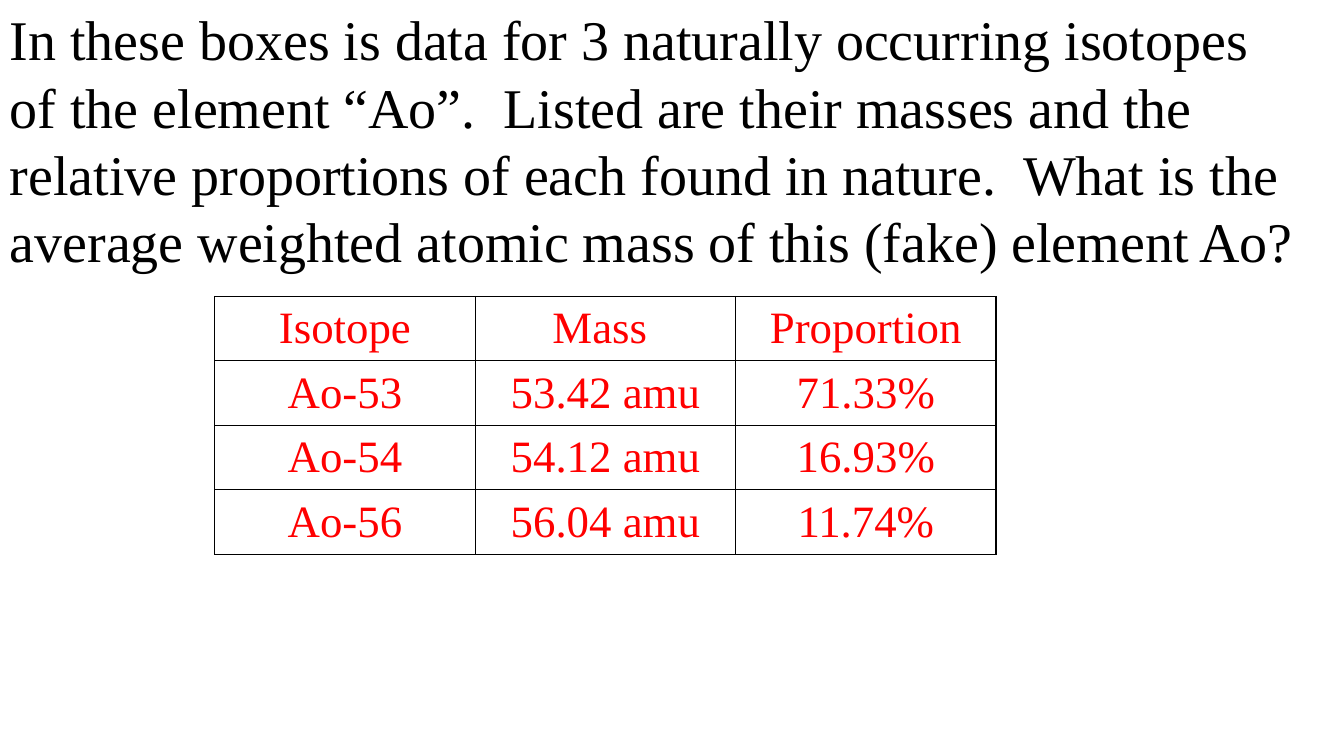
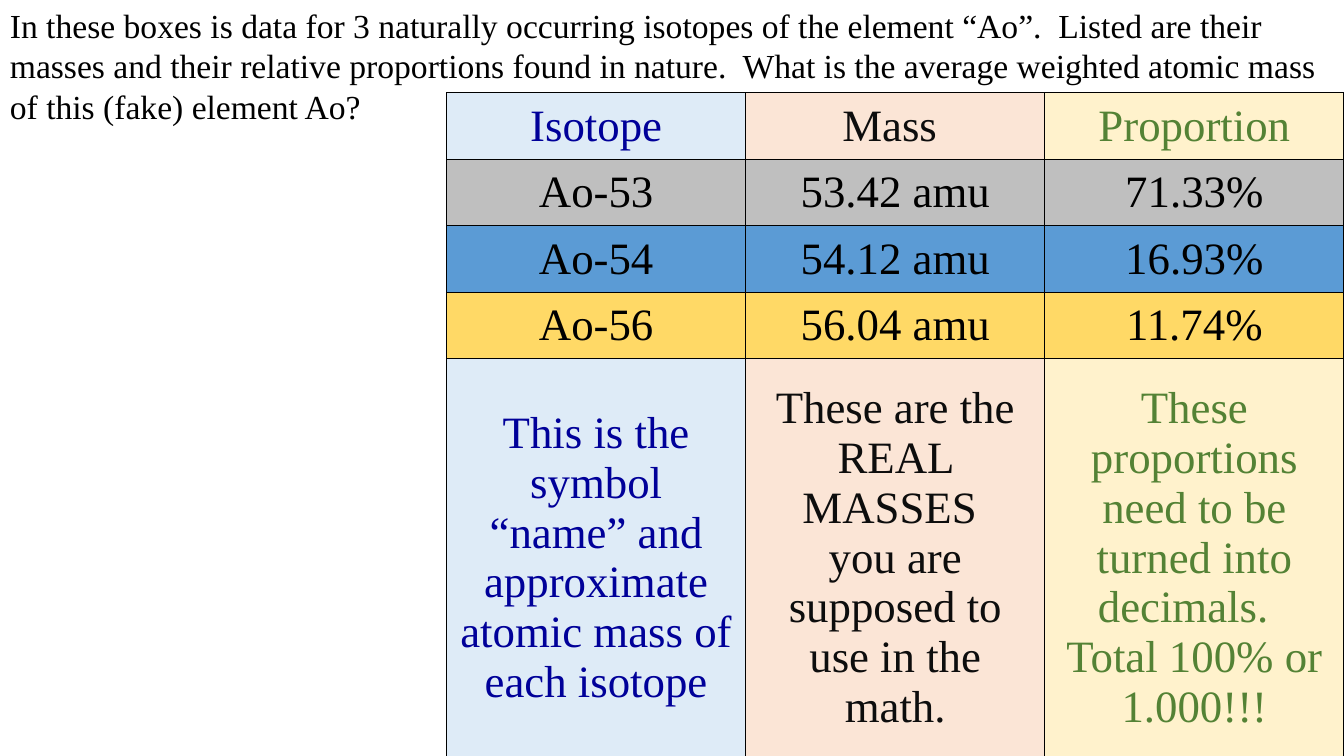
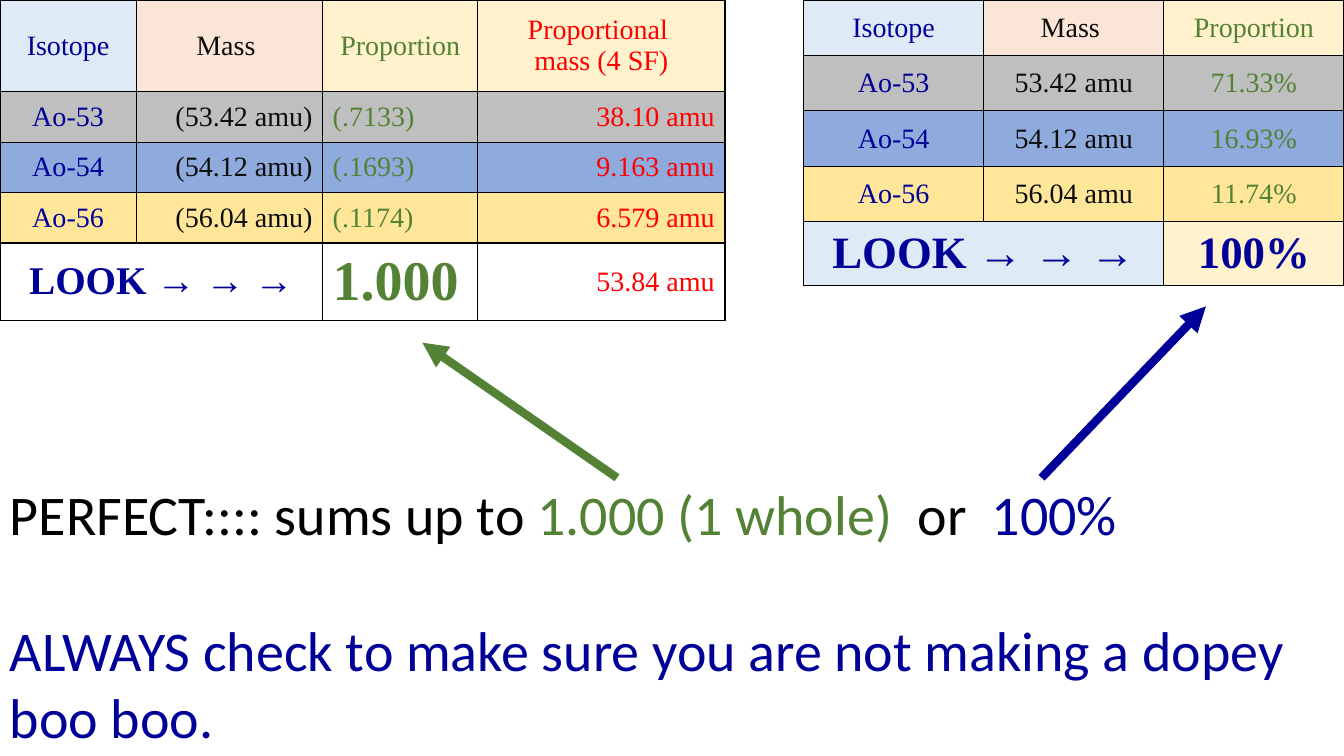
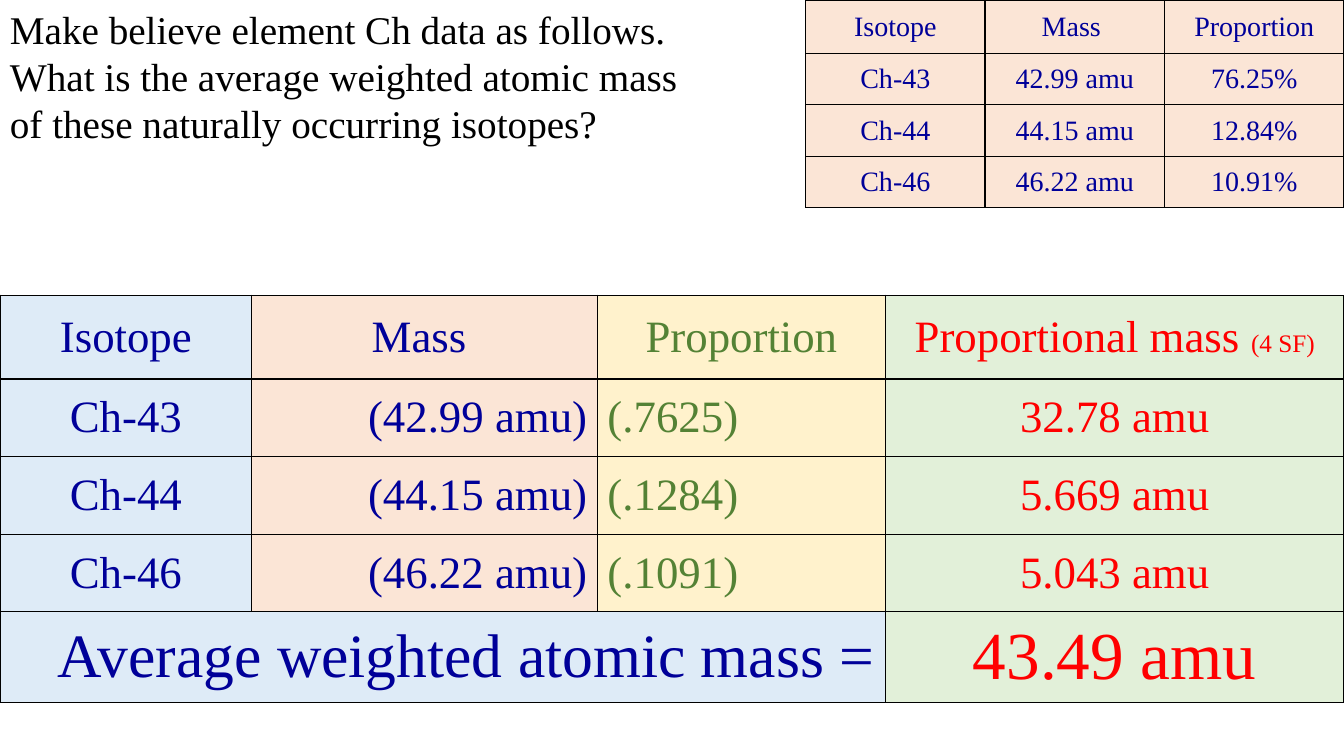
from lxml.etree import SubElement
from pptx import Presentation
from pptx.dml.color import RGBColor
from pptx.enum.shapes import MSO_CONNECTOR
from pptx.enum.text import MSO_ANCHOR, PP_ALIGN
from pptx.oxml import parse_xml
from pptx.oxml.ns import nsdecls, qn
from pptx.util import Inches, Pt

WIDTH, HEIGHT = 13.33, 7.5
SERIF, SANS = "Times New Roman", "Calibri"
BLACK, INK, NAVY, GREEN, RED = "000000", "0D0D0D", "000099", "548235", "FF0000"
ICE, PEACH, CREAM, MINT = "DEEBF7", "FBE5D6", "FFF2CC", "E2F0D9"
GREY, BLUE, GOLD = "BFBFBF", "5B9BD5", "FFD966"
PERIWINKLE, SAND = "8FAADC", "FFE699"
ALIGNMENTS = {"l": PP_ALIGN.LEFT, "c": PP_ALIGN.CENTER, "r": PP_ALIGN.RIGHT}
colour_of = RGBColor.from_string

HEADER = ["Isotope", "Mass ", "Proportion"]
AO_ROWS = [
    ["Ao-53", "53.42 amu", "71.33%"],
    ["Ao-54", "54.12 amu", "16.93%"],
    ["Ao-56", "56.04 amu", "11.74%"],
]
CH_ROWS = [
    ["Ch-43", "42.99 amu", "76.25%"],
    ["Ch-44", "44.15 amu", "12.84%"],
    ["Ch-46", "46.22 amu", "10.91%"],
]
COLUMN_FILLS = [ICE, PEACH, CREAM]
COLUMN_COLOURS = [NAVY, INK, GREEN]


def add_text(slide, text, height, size, font_name=SERIF, colour=BLACK):
    """Full-width text at the top of the slide; \\v breaks a line."""
    box = slide.shapes.add_textbox(0, 0, Inches(WIDTH), Inches(height))
    box.text_frame.word_wrap = True
    box.text_frame.text = text
    for paragraph in box.text_frame.paragraphs:
        paragraph.font.name = font_name
        paragraph.font.size = Pt(size)
        paragraph.font.color.rgb = colour_of(colour)
    return box


def add_grid(slide, left, top, width, shares, heights, rows, size,
             colours, fills, aligns, emphasis=None, merged=1):
    """Bordered table. colours, fills and aligns hold one entry per row and
    column; emphasis maps (row, column) to (size, bold); the first `merged`
    cells of the last row become one."""
    table = slide.shapes.add_table(
        len(rows), len(shares), Inches(left), Inches(top),
        Inches(width), Inches(sum(heights))).table
    table.first_row = table.horz_banding = False
    for column, share in zip(table.columns, shares):
        column.width = Inches(width * share / sum(shares))
    for row, height in zip(table.rows, heights):
        row.height = Inches(height)
    for r, texts in enumerate(rows):
        for c, text in enumerate(texts):
            cell = table.cell(r, c)
            cell.text = text
            cell.vertical_anchor = MSO_ANCHOR.MIDDLE
            cell_size, bold = (emphasis or {}).get((r, c), (size, False))
            for paragraph in cell.text_frame.paragraphs:
                paragraph.alignment = ALIGNMENTS[aligns[r][c]]
                paragraph.font.name = SERIF
                paragraph.font.size = Pt(cell_size)
                paragraph.font.bold = bold
                paragraph.font.color.rgb = colour_of(colours[r][c])
            for side in "LRTB":
                cell._tc.get_or_add_tcPr().append(parse_xml(
                    f'<a:ln{side} {nsdecls("a")} w="12700"><a:solidFill>'
                    f'<a:srgbClr val="{BLACK}"/></a:solidFill></a:ln{side}>'))
            if fills[r][c]:
                cell.fill.solid()
                cell.fill.fore_color.rgb = colour_of(fills[r][c])
            else:
                cell.fill.background()
    if merged > 1:
        last = len(rows) - 1
        table.cell(last, 0).merge(table.cell(last, merged - 1))
    return table


presentation = Presentation()
presentation.slide_width, presentation.slide_height = Inches(WIDTH), Inches(HEIGHT)
blank = presentation.slide_layouts[6]
question, labels, check, practice = [
    presentation.slides.add_slide(blank) for _ in range(4)]

# Slide 1: the question and its data
add_text(question,
         "In these boxes is data for 3 naturally occurring isotopes\v"
         "of the element “Ao”.  Listed are their masses and the \v"
         "relative proportions of each found in nature.  What is the \v"
         "average weighted atomic mass of this (fake) element Ao?", 2.79, 40)
add_grid(question, 2.13, 2.94, 7.75, [1] * 3, [0.64] * 4, [HEADER] + AO_ROWS, 32,
         colours=[[RED] * 3] * 4, fills=[[None] * 3] * 4, aligns=["ccc"] * 4)

# Slide 2: what each column means
add_text(labels,
         "In these boxes is data for 3 naturally occurring isotopes of the element "
         "“Ao”.  Listed are their masses and their relative proportions found in "
         "nature.  What is the average weighted atomic mass of this (fake) element Ao?",
         1.31, 24)
meanings = [
    "This is the symbol “name” and approximate atomic mass of each isotope",
    "These are the REAL MASSES \vyou are supposed to use in the math.",
    "These proportions need to be turned into decimals.  \nTotal 100% or 1.000!!!",
]
add_grid(labels, 4.43, 0.92, WIDTH - 4.43, [1] * 3, [0.66] * 4 + [3.95],
         [HEADER] + AO_ROWS + [meanings], 32,
         colours=[COLUMN_COLOURS] + [[BLACK] * 3] * 3 + [COLUMN_COLOURS],
         fills=[COLUMN_FILLS] + [[fill] * 3 for fill in (GREY, BLUE, GOLD)]
         + [COLUMN_FILLS],
         aligns=["ccc"] * 5)

# Slide 3: percentages and decimals both add up to a whole
look = "LOOK → → →"
isotope_fills = [[fill] * 4 for fill in (GREY, PERIWINKLE, SAND)]
add_grid(check, 7.97, 0, WIDTH - 7.97, [1] * 3, [0.55] * 4 + [0.63],
         [HEADER] + AO_ROWS + [[look, "", "100%"]], 20,
         colours=[COLUMN_COLOURS] * 4 + [[NAVY] * 3],
         fills=[COLUMN_FILLS] + isotope_fills + [[ICE, ICE, CREAM]],
         aligns=["ccc"] * 5,
         emphasis={(4, 0): (32, True), (4, 2): (32, True)}, merged=2)
add_grid(check, 0, 0, 7.19, [1.35, 1.85, 1.54, 2.45], [0.91] + [0.5] * 3 + [0.77],
         [HEADER + ["Proportional \vmass (4 SF)"],
          ["Ao-53", "(53.42 amu)", "(.7133)", "38.10 amu"],
          ["Ao-54", "(54.12 amu)", "(.1693)", "9.163 amu"],
          ["Ao-56", "(56.04 amu)", "(.1174)", "6.579 amu"],
          [look, "", "1.000", "53.84 amu"]], 20,
         colours=[COLUMN_COLOURS + [RED]] * 5,
         fills=[COLUMN_FILLS + [CREAM]] + isotope_fills + [[None] * 4],
         aligns=["cccc"] + ["crlr"] * 3 + ["cclr"],
         emphasis={(4, 0): (28, True), (4, 2): (40, True)}, merged=2)

verdict = add_text(check,
                   "\nALWAYS check to make sure you are not making a dopey boo boo.",
                   2.79, 40, SANS, NAVY)
verdict.top = Inches(HEIGHT - 2.79)
sums, reminder = verdict.text_frame.paragraphs
for text, colour in [("PERFECT:::: sums up to ", BLACK), ("1.000 (1 whole)  ", GREEN),
                     ("or  ", BLACK), ("100%", NAVY)]:
    run = sums.add_run()
    run.text = text
    run.font.color.rgb = colour_of(colour)
reminder.space_before = Pt(49)

# Arrows from the verdict up to the two totals
for start_x, end_x, end_y, colour in [(10.33, 11.96, 3.04, NAVY),
                                      (6.12, 4.19, 3.4, GREEN)]:
    arrow = check.shapes.add_connector(
        MSO_CONNECTOR.STRAIGHT, Inches(start_x), Inches(4.74),
        Inches(end_x), Inches(end_y))
    arrow.line.width = Pt(6)
    arrow.line.color.rgb = colour_of(colour)
    SubElement(arrow.line._get_or_add_ln(), qn("a:tailEnd"), type="triangle")
    SubElement(arrow._element.spPr, qn("a:effectLst"))

# Slide 4: a second element, worked through
add_text(practice,
         "Make believe element Ch data as follows.  \v"
         "What is the average weighted atomic mass \v"
         "of these naturally occurring isotopes?", 1.51, 28)
add_grid(practice, 7.99, 0, WIDTH - 7.99, [1] * 3, [0.53] + [0.51] * 3,
         [HEADER] + CH_ROWS, 20,
         colours=[[NAVY] * 3] * 4, fills=[[PEACH] * 3] * 4, aligns=["ccc"] * 4)
solution = add_grid(
    practice, 0, 2.93, WIDTH, [2.5, 3.43, 2.86, 4.55], [0.83] + [0.77] * 3 + [0.9],
    [HEADER + ["Proportional mass "],
     ["Ch-43", "(42.99 amu)", "(.7625)", "32.78 amu"],
     ["Ch-44", "(44.15 amu)", "(.1284)", "5.669 amu"],
     ["Ch-46", "(46.22 amu)", "(.1091)", "5.043 amu"],
     ["Average weighted atomic mass =", "", "", "43.49 amu"]], 32,
    colours=[[NAVY, NAVY, GREEN, RED]] * 5,
    fills=[COLUMN_FILLS + [MINT]] * 5,
    aligns=["cccc"] + ["crlc"] * 3 + ["rrrc"],
    emphasis={(4, 0): (44, False), (4, 3): (48, False)}, merged=3)
figures_note = solution.cell(0, 3).text_frame.paragraphs[0].add_run()
figures_note.text = "(4 SF)"
figures_note.font.size = Pt(18)

presentation.save("out.pptx")
